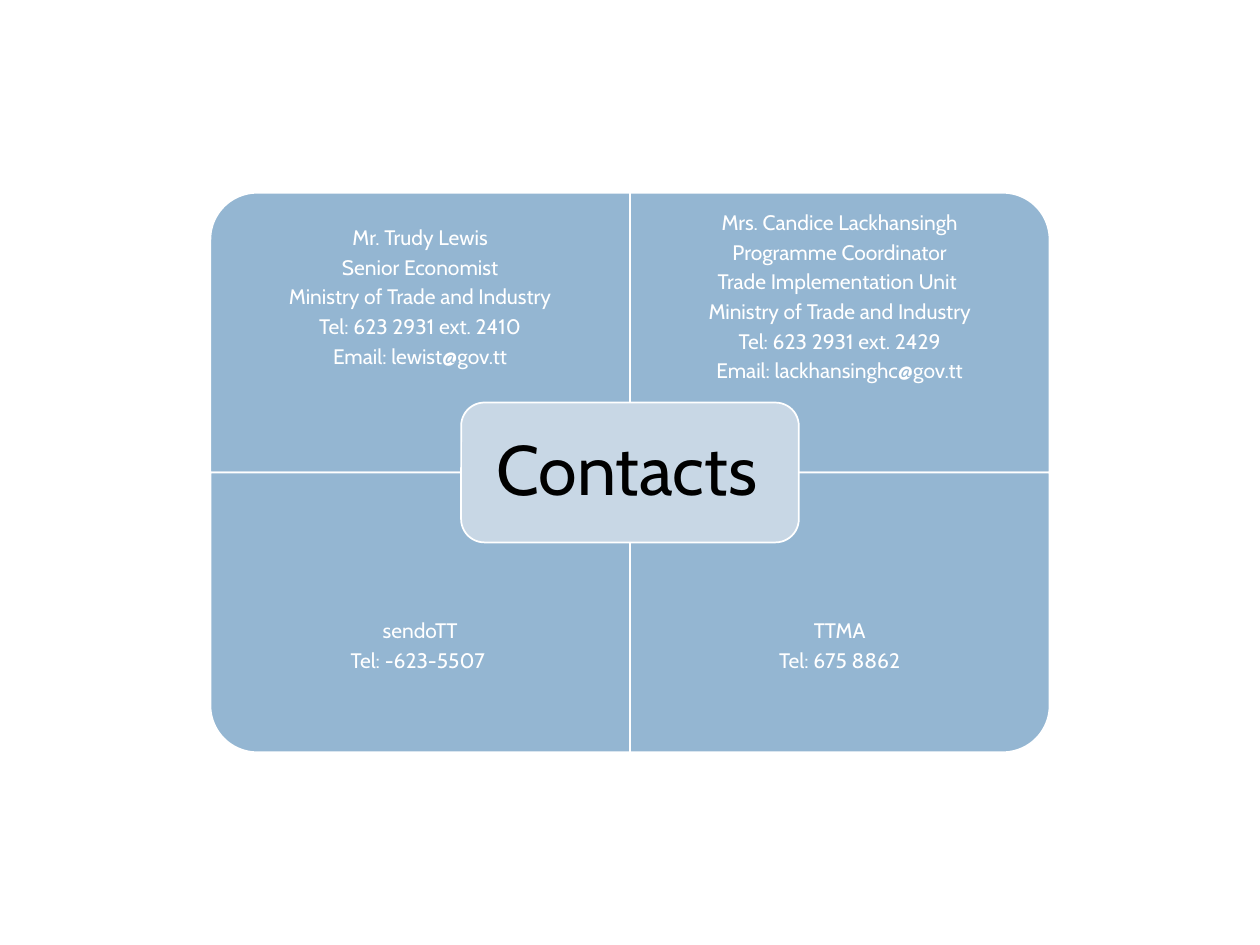
from dataclasses import dataclass

from pptx import Presentation
from pptx import util as u
from pptx.dml.color import RGBColor
from pptx.enum import shapes, text


@dataclass(frozen=True)
class Theme:
    font: str = "Cabin"
    panel: str = "94B6D2"
    hub: str = "C8D7E5"
    light: str = "FFFFFF"
    dark: str = "000000"
    body: float = 12
    title: float = 40
    line: float = 1


@dataclass(frozen=True)
class Contact:
    col: int
    row: int
    rotation: int  # turns the rounded corner outward
    lines: tuple[str, ...]


THEME = Theme()
LEFT, TOP = 1.67, 1.53
PANEL_W, PANEL_H = 3.33, 2.22
TEXT_H = 1.67
HUB_W, HUB_H, HUB_PAD = 2.68, 1.11, 0.06

CONTACTS = [
    Contact(0, 0, 270, ("Mr. Trudy Lewis", "Senior Economist",
                        "Ministry of Trade and Industry",
                        "Tel: 623 2931 ext. 2410", "Email: lewist@gov.tt")),
    Contact(1, 0, 0, ("Mrs. Candice Lackhansingh", "Programme Coordinator",
                      "Trade Implementation Unit ",
                      "Ministry of Trade and Industry",
                      "Tel: 623 2931 ext. 2429", "Email: lackhansinghc@gov.tt")),
    Contact(0, 1, 180, ("sendoTT", "Tel: -623-5507 ")),
    Contact(1, 1, 90, ("TTMA", "Tel: 675 8862")),
]


def write(sp, lines: tuple[str, ...], *, size: float, color: str,
          inset: float, after: float = 0, extra_right: float = 0) -> None:
    """Fill a shape with centred paragraphs."""
    tf = sp.text_frame
    tf.word_wrap = True
    tf.auto_size = text.MSO_AUTO_SIZE.NONE
    tf.vertical_anchor = text.MSO_ANCHOR.MIDDLE
    tf.margin_left = tf.margin_top = tf.margin_bottom = u.Inches(inset)
    tf.margin_right = u.Inches(inset + extra_right)
    for i, line in enumerate(lines):
        p = tf.paragraphs[0] if i == 0 else tf.add_paragraph()
        p.alignment = text.PP_ALIGN.CENTER
        p.line_spacing = 0.9
        p.space_before, p.space_after = u.Pt(0), u.Pt(after)
        r = p.add_run()
        r.text = line
        r.font.name, r.font.size = THEME.font, u.Pt(size)
        r.font.color.rgb = RGBColor.from_string(color)


def add_block(s, kind, cx: float, cy: float, w: float, h: float, *,
              fill: str, rotation: int = 0) -> None:
    """Draw an outlined shape around its centre; w and h are as seen."""
    if rotation % 180:
        w, h = h, w
    sp = s.shapes.add_shape(kind, u.Inches(cx - w / 2), u.Inches(cy - h / 2),
                            u.Inches(w), u.Inches(h))
    sp.rotation = rotation
    sp.shadow.inherit = False
    sp.fill.solid()
    sp.fill.fore_color.rgb = RGBColor.from_string(fill)
    sp.line.color.rgb = RGBColor.from_string(THEME.light)
    sp.line.width = u.Pt(THEME.line)


def add_contact(s, c: Contact) -> None:
    x, y = LEFT + c.col * PANEL_W, TOP + c.row * PANEL_H
    add_block(s, shapes.MSO_SHAPE.ROUND_1_RECTANGLE, x + PANEL_W / 2,
              y + PANEL_H / 2, PANEL_W, PANEL_H, fill=THEME.panel,
              rotation=c.rotation)
    # Text keeps to the outer part of the panel, clear of the hub
    text_top = y + c.row * (PANEL_H - TEXT_H)
    sp = s.shapes.add_textbox(u.Inches(x), u.Inches(text_top),
                              u.Inches(PANEL_W), u.Inches(TEXT_H))
    write(sp, c.lines, size=THEME.body, color=THEME.light, inset=0.09, after=4)


def add_hub(s) -> None:
    cx, cy = LEFT + PANEL_W, TOP + PANEL_H
    add_block(s, shapes.MSO_SHAPE.ROUNDED_RECTANGLE, cx, cy, HUB_W, HUB_H,
              fill=THEME.hub)
    sp = s.shapes.title
    w, h = HUB_W - 2 * HUB_PAD, HUB_H - 2 * HUB_PAD
    sp.left, sp.top = u.Inches(cx - w / 2), u.Inches(cy - h / 2)
    sp.width, sp.height = u.Inches(w), u.Inches(h)
    write(sp, ("Contacts",), size=THEME.title, color=THEME.dark, inset=0.17,
          extra_right=0.05)
    # Bring the title in front of the hub
    sp.element.getparent().append(sp.element)


def main() -> None:
    prs = Presentation()
    prs.slide_width, prs.slide_height = u.Inches(10), u.Inches(7.5)
    s = prs.slides.add_slide(prs.slide_layouts[5])

    # Four contact panels
    for c in CONTACTS:
        add_contact(s, c)

    # Central title
    add_hub(s)
    prs.save("out.pptx")


if __name__ == "__main__":
    main()
